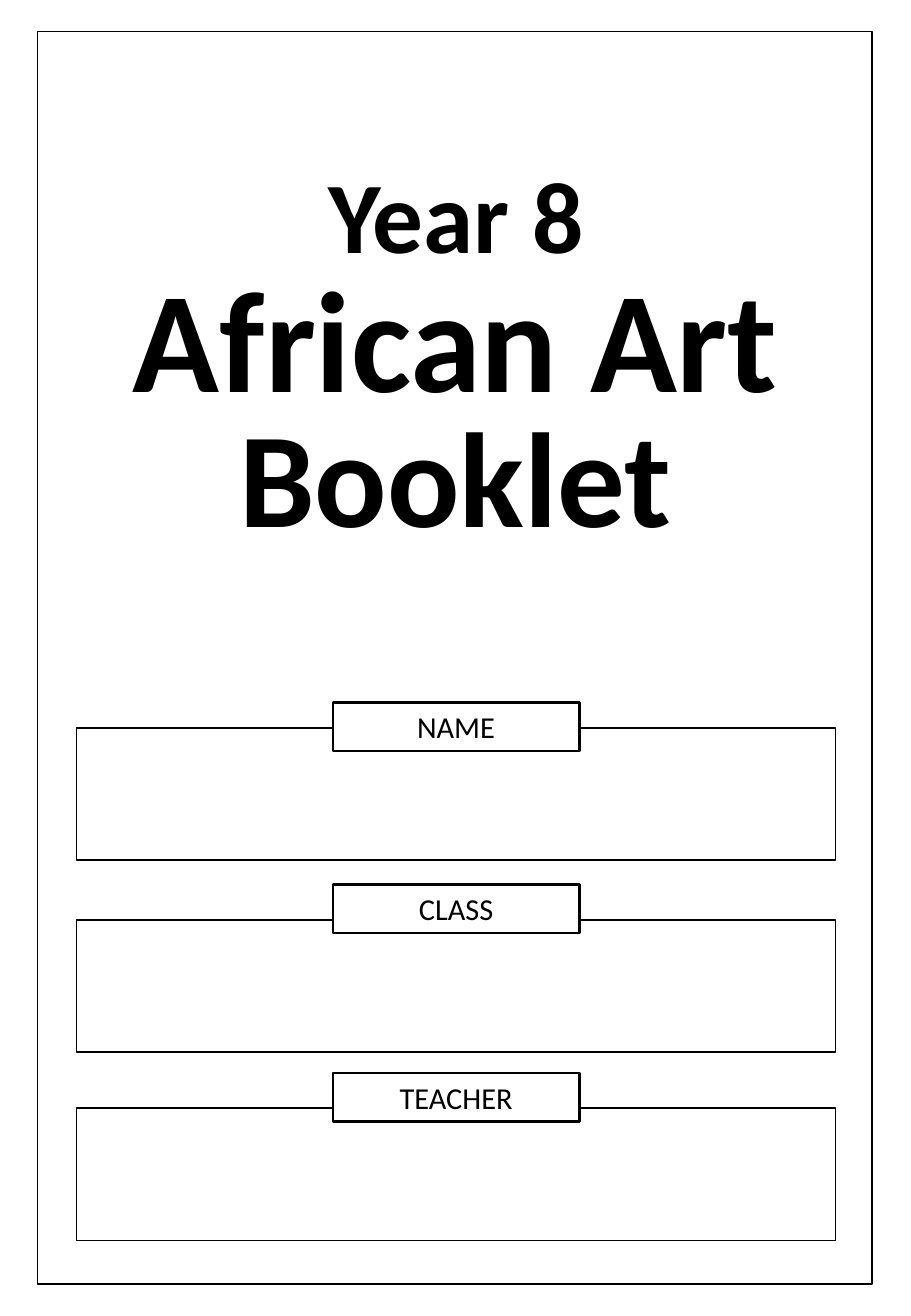
from lxml import etree
from pptx import Presentation
from pptx.dml.color import RGBColor
from pptx.enum.shapes import MSO_SHAPE
from pptx.enum.text import MSO_ANCHOR, MSO_AUTO_SIZE, PP_ALIGN
from pptx.oxml.ns import qn
from pptx.util import Inches, Pt

RECTANGLE = MSO_SHAPE.RECTANGLE
CENTER = PP_ALIGN.CENTER
TOP = MSO_ANCHOR.TOP
GROW = MSO_AUTO_SIZE.SHAPE_TO_FIT_TEXT

COLORS = {"ink": "000000", "paper": "FFFFFF"}
FONT = "Calibri"


def color(name):
    return RGBColor.from_string(COLORS[name])


def outline_text(run, width):
    """Draw a solid line around the letters of a run."""
    line = etree.Element(qn("a:ln"), w=str(Pt(width)))
    fill = etree.SubElement(line, qn("a:solidFill"))
    etree.SubElement(fill, qn("a:srgbClr"), val=COLORS["ink"])
    run.font._element.insert(0, line)


def write_text(shape, text, size, bold=False, wrap=True, outline=None):
    frame = shape.text_frame
    frame.word_wrap = wrap
    frame.auto_size = GROW
    frame.vertical_anchor = TOP
    paragraph = frame.paragraphs[0]
    paragraph.alignment = CENTER
    run = paragraph.add_run()
    run.text = text
    run.font.name = FONT
    run.font.size = Pt(size)
    run.font.bold = bold
    run.font.color.rgb = color("ink")
    if outline:
        outline_text(run, outline)


def add_box(slide, left, top, width, height, line_width=1, fill=None):
    box = slide.shapes.add_shape(
        RECTANGLE, Inches(left), Inches(top), Inches(width), Inches(height))
    box.shadow.inherit = False
    box.line.color.rgb = color("ink")
    box.line.width = Pt(line_width)
    if fill:
        box.fill.solid()
        box.fill.fore_color.rgb = color(fill)
    else:
        box.fill.background()
    return box


def add_title_line(group, text, left, top, width, height, size, wrap=False):
    title = group.shapes.add_textbox(
        Inches(left), Inches(top), Inches(width), Inches(height))
    write_text(title, text, size, bold=True, wrap=wrap, outline=0.75)
    return title


def add_field(slide, label, box_top, label_top):
    add_box(slide, 0.63, box_top, 6.25, 1.09)
    tag = add_box(slide, 2.74, label_top, 2.03, 0.4, line_width=1.5, fill="paper")
    write_text(tag, label, 18)


def main():
    presentation = Presentation()
    presentation.slide_width = Inches(7.5)
    presentation.slide_height = Inches(10.83)
    slide = presentation.slides.add_slide(presentation.slide_layouts[6])

    # Title
    group = slide.shapes.add_group_shape()
    subject = add_title_line(group, "African Art", 1, 2.02, 5.5, 1.5, 85)
    frame = subject.text_frame
    frame.margin_left = frame.margin_right = Inches(0.06)
    frame.margin_top = frame.margin_bottom = Inches(0.03)
    add_title_line(group, "Year 8", 2.59, 1.2, 2.33, 1.11, 60)
    add_title_line(group, "Booklet", 1.38, 3.18, 4.74, 1.45, 80, wrap=True)

    # Fields to fill in
    for label, box_top, label_top in (
            ("NAME", 5.99, 5.78), ("CLASS", 7.57, 7.28), ("TEACHER", 9.12, 8.83)):
        add_field(slide, label, box_top, label_top)

    # Page border
    add_box(slide, 0.31, 0.26, 6.87, 10.31)

    presentation.save("out.pptx")


if __name__ == "__main__":
    main()
